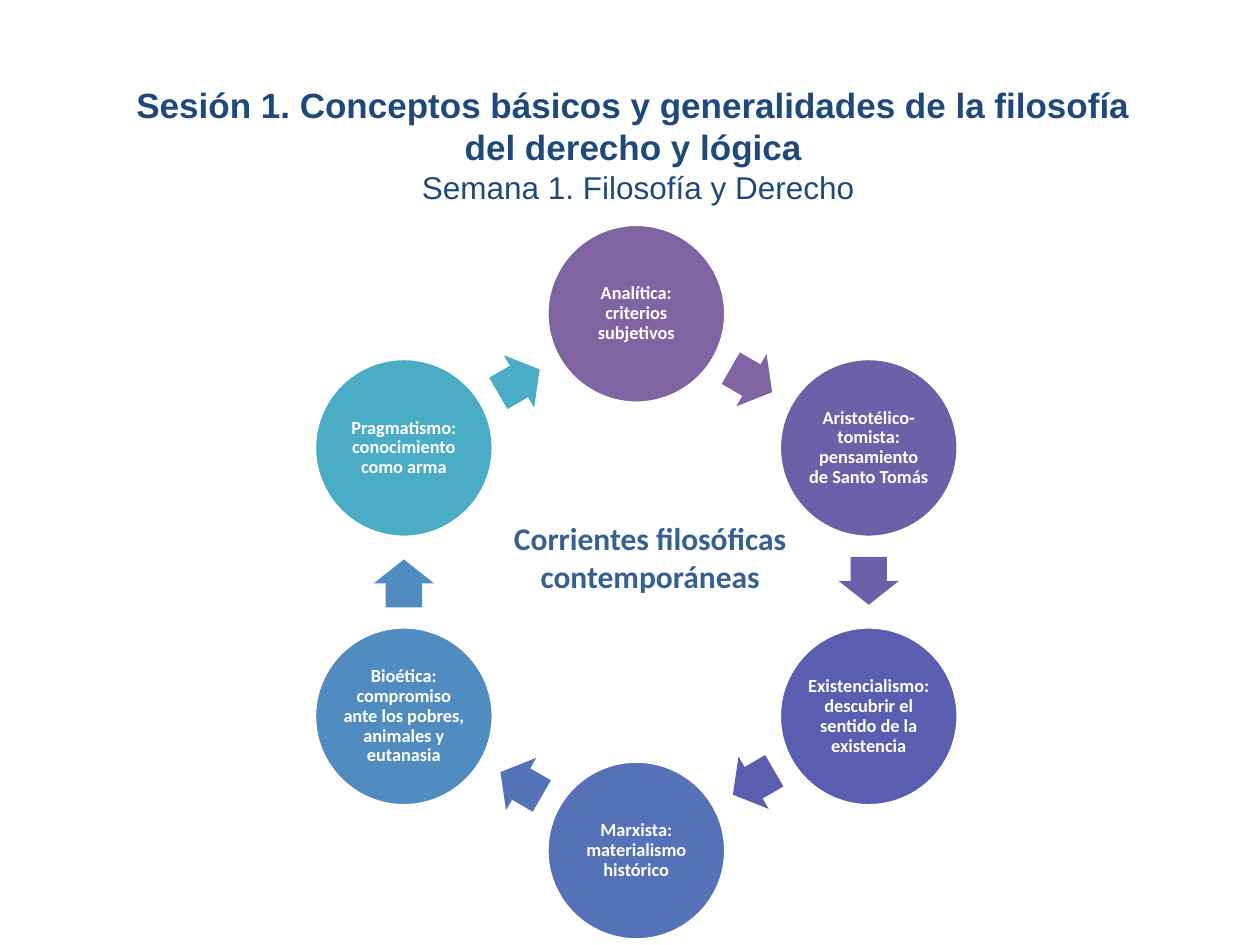
"""Build a slide with a ring of six currents of philosophy."""
import math
from typing import Any, NamedTuple

import pptx
import pptx.dml.color
import pptx.enum.shapes
import pptx.enum.text
import pptx.util

Inches = pptx.util.Inches
Kind = pptx.enum.shapes.MSO_SHAPE
Align = pptx.enum.text.PP_ALIGN
Anchor = pptx.enum.text.MSO_ANCHOR

HUES = {
    "white": "FFFFFF", "navy": "1F497D", "blue": "376092",
    "plum": "8064A2", "violet": "6E5FA9", "indigo": "5A5EB1",
    "cobalt": "5572B8", "sky": "508CBF", "teal": "4BACC6",
}
FORMS = {
    "title": {"name": "Arial", "size": pptx.util.Pt(20), "bold": True},
    "week": {"name": "Arial", "size": pptx.util.Pt(18), "bold": False},
    "core": {"name": "Calibri", "size": pptx.util.Pt(18), "bold": True},
    "node": {"name": "Calibri", "size": pptx.util.Pt(10.5), "bold": True},
}
MID_X, MID_Y, RADIUS = 5.05, 4.62, 2.13
DISC, LONG, WIDE, LAG = 1.42, 0.38, 0.48, 0.01


class Node(NamedTuple):
    text: str
    hue: str


NODES = [
    Node("Analítica: criterios subjetivos", "plum"),
    Node("Aristotélico-tomista: pensamiento de Santo Tomás", "violet"),
    Node("Existencialismo: descubrir el sentido de la existencia", "indigo"),
    Node("Marxista: materialismo histórico", "cobalt"),
    Node("Bioética: compromiso ante los pobres, animales y eutanasia", "sky"),
    Node("Pragmatismo: conocimiento como arma", "teal"),
]


def tint(hue: str) -> pptx.dml.color.RGBColor:
    """Return the named colour."""
    return pptx.dml.color.RGBColor.from_string(HUES[hue])


def assign(item: Any, values: dict[str, Any]) -> None:
    """Set each named value on the item."""
    for name, value in values.items():
        setattr(item, name, value)


def write(para: Any, text: str, form: str, hue: str) -> None:
    """Add one styled run to a centred paragraph."""
    para.alignment = Align.CENTER
    run = para.add_run()
    run.text = text
    assign(run.font, FORMS[form])
    run.font.color.rgb = tint(hue)


def box(slide: Any, left: float, top: float, width: float, height: float,
        anchor: Any) -> Any:
    """Add a wrapping text box and return its first paragraph."""
    frame = slide.shapes.add_textbox(
        Inches(left), Inches(top), Inches(width), Inches(height)).text_frame
    assign(frame, {"word_wrap": True, "vertical_anchor": anchor})
    return frame.paragraphs[0]


def place(slide: Any, kind: Any, x: float, y: float, width: float,
          height: float, hue: str) -> Any:
    """Add a filled shape centred on a point."""
    shape = slide.shapes.add_shape(
        kind, Inches(x - width / 2), Inches(y - height / 2),
        Inches(width), Inches(height))
    shape.shadow.inherit = False
    shape.fill.solid()
    shape.fill.fore_color.rgb = tint(hue)
    return shape


def disc(slide: Any, node: Node, turn: float) -> None:
    """Draw a labelled disc on the ring."""
    angle = math.radians(turn - 90)
    shape = place(slide, Kind.OVAL, MID_X + RADIUS * math.cos(angle),
                  MID_Y + RADIUS * math.sin(angle), DISC, DISC, node.hue)
    shape.line.color.rgb = tint("white")
    shape.line.width = pptx.util.Pt(2)
    frame = shape.text_frame
    sides = ("left", "top", "right", "bottom")
    assign(frame, {f"margin_{side}": Inches(0.02) for side in sides})
    assign(frame, {"word_wrap": True, "vertical_anchor": Anchor.MIDDLE})
    para = frame.paragraphs[0]
    para.line_spacing = 0.9
    write(para, node.text, "node", "white")


def arrow(slide: Any, hue: str, turn: float) -> None:
    """Draw the arrow that leads to the next disc."""
    angle, course = math.radians(turn - 60), math.radians(turn + 30)
    reach = RADIUS * math.cos(math.radians(30))
    x = MID_X + reach * math.cos(angle) - LAG * math.cos(course)
    y = MID_Y + reach * math.sin(angle) - LAG * math.sin(course)
    shape = place(slide, Kind.RIGHT_ARROW, x, y, LONG, WIDE, hue)
    shape.line.fill.background()
    shape.adjustments[0], shape.adjustments[1] = 0.6, 0.5
    shape.rotation = turn + 30


def main() -> None:
    """Build and save the slide."""
    deck = pptx.Presentation()
    assign(deck, {"slide_width": Inches(10), "slide_height": Inches(7.5)})
    slide = deck.slides.add_slide(deck.slide_layouts[6])
    head = box(slide, 0.48, 0.6, 9.17, 1.1, Anchor.MIDDLE)
    for text in (
            "Sesión 1. Conceptos básicos y generalidades de la filosofía ",
            "del derecho y lógica "):
        write(head, text, "title", "navy")
        head.add_line_break()
    write(head, "Semana 1. Filosofía y Derecho", "week", "navy")
    core = box(slide, 3.82, 4.07, 2.68, 0.71, Anchor.TOP)
    write(core, "Corrientes filosóficas contemporáneas", "core", "blue")
    step = 360 / len(NODES)
    for rank, node in enumerate(NODES):
        disc(slide, node, rank * step)
        arrow(slide, node.hue, rank * step)
    deck.save("out.pptx")


if __name__ == "__main__":
    main()
